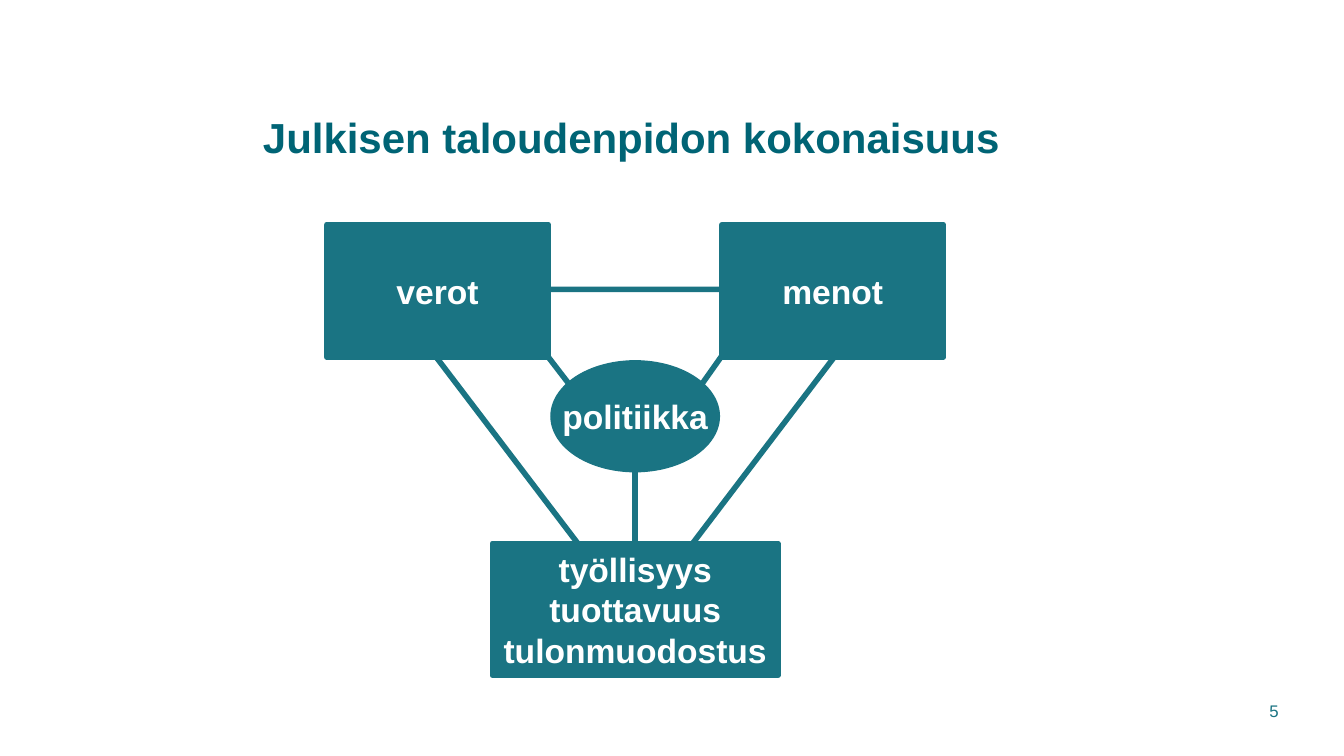
from lxml.etree import SubElement
from pptx import Presentation
from pptx.dml.color import RGBColor
from pptx.enum.shapes import MSO_CONNECTOR as Link, MSO_SHAPE as Kind
from pptx.enum.text import MSO_ANCHOR as Anchor, PP_ALIGN as Align
from pptx.oxml.ns import qn
from pptx.util import Inches, Pt

TEAL = RGBColor(0x1A, 0x74, 0x83)
DARK = RGBColor(0x00, 0x64, 0x75)
WHITE = RGBColor(0xFF, 0xFF, 0xFF)

CELL = 0.1  # inches per grid column and row
MID = 63    # column of the diagram's axis
SIDE = 19.6  # columns from the axis to the centre of an upper box


def grid(*cells):
    return [Inches(cell * CELL) for cell in cells]


class Board:
    """Holds the style and the current slide; lengths are grid cells."""

    font = "Arial"
    thick = Pt(4)

    def __init__(self, deck):
        self.slide = deck.slides.add_slide(deck.slide_layouts[6])

    def fill_text(self, frame, lines, size, color, bold=True,
                  align=Align.CENTER):
        frame.vertical_anchor = Anchor.MIDDLE
        for i, line in enumerate(lines):
            para = frame.add_paragraph() if i else frame.paragraphs[0]
            para.alignment = align
            run = para.add_run()
            run.text = line
            font = run.font
            font.name, font.size, font.bold = self.font, Pt(size), bold
            font.color.rgb = color

    def label(self, area, text, size, color, **style):
        frame = self.slide.shapes.add_textbox(*grid(*area)).text_frame
        frame.word_wrap = True
        self.fill_text(frame, [text], size, color, **style)
        return frame

    def shape(self, kind, x, y, wide, high, lines=(), line=thick):
        """Adds a shape centred on x, y; without lines of text it is hollow."""
        item = self.slide.shapes.add_shape(
            kind, *grid(x - wide / 2, y - high / 2, wide, high))
        item.shadow.inherit = False
        item.line.color.rgb = TEAL
        item.line.width = line
        if lines:
            item.fill.solid()
            item.fill.fore_color.rgb = TEAL
            item.text_frame.word_wrap = kind == Kind.RECTANGLE
            self.fill_text(item.text_frame, lines, 24, WHITE)
        else:
            item.fill.background()
        return item

    def link(self, *ends):
        item = self.slide.shapes.add_connector(Link.STRAIGHT, *grid(*ends))
        item.line.color.rgb = TEAL
        item.line.width = self.thick
        SubElement(item._element.spPr, qn("a:effectLst"))


def main():
    deck = Presentation()
    deck.slide_width, deck.slide_height = Inches(13.33), Inches(7.5)
    board = Board(deck)

    title = board.label((8.9, 7.9, 107.5, 11.8),
                        "Julkisen taloudenpidon kokonaisuus", 30, DARK)
    title.margin_left = title.margin_right = 0
    title.paragraphs[0].line_spacing = 0.95
    board.label((115.7, 68.5, 12.1, 4), "5", 12, TEAL,
                bold=False, align=Align.RIGHT)

    frame = board.shape(Kind.ISOSCELES_TRIANGLE, MID, 45.05, 49.7, 32.7)
    frame.rotation = 180
    board.shape(Kind.RECTANGLE, MID, 60.45, 28.3, 13.1,
                ["työllisyys", "tuottavuus", "tulonmuodostus"])
    for x, word in ((MID + SIDE, "menot"), (MID - SIDE, "verot")):
        board.shape(Kind.RECTANGLE, x, 28.85, 22, 13.1, [word])
    board.shape(Kind.OVAL, MID, 41.3, 16.7, 11, ["politiikka"], Pt(1))

    board.link(75.7, 29.5, 68.7, 39.4)
    board.link(51.6, 31.8, 57.9, 40)
    board.link(MID, 45.5, MID, 54.7)

    deck.save("out.pptx")


if __name__ == "__main__":
    main()
